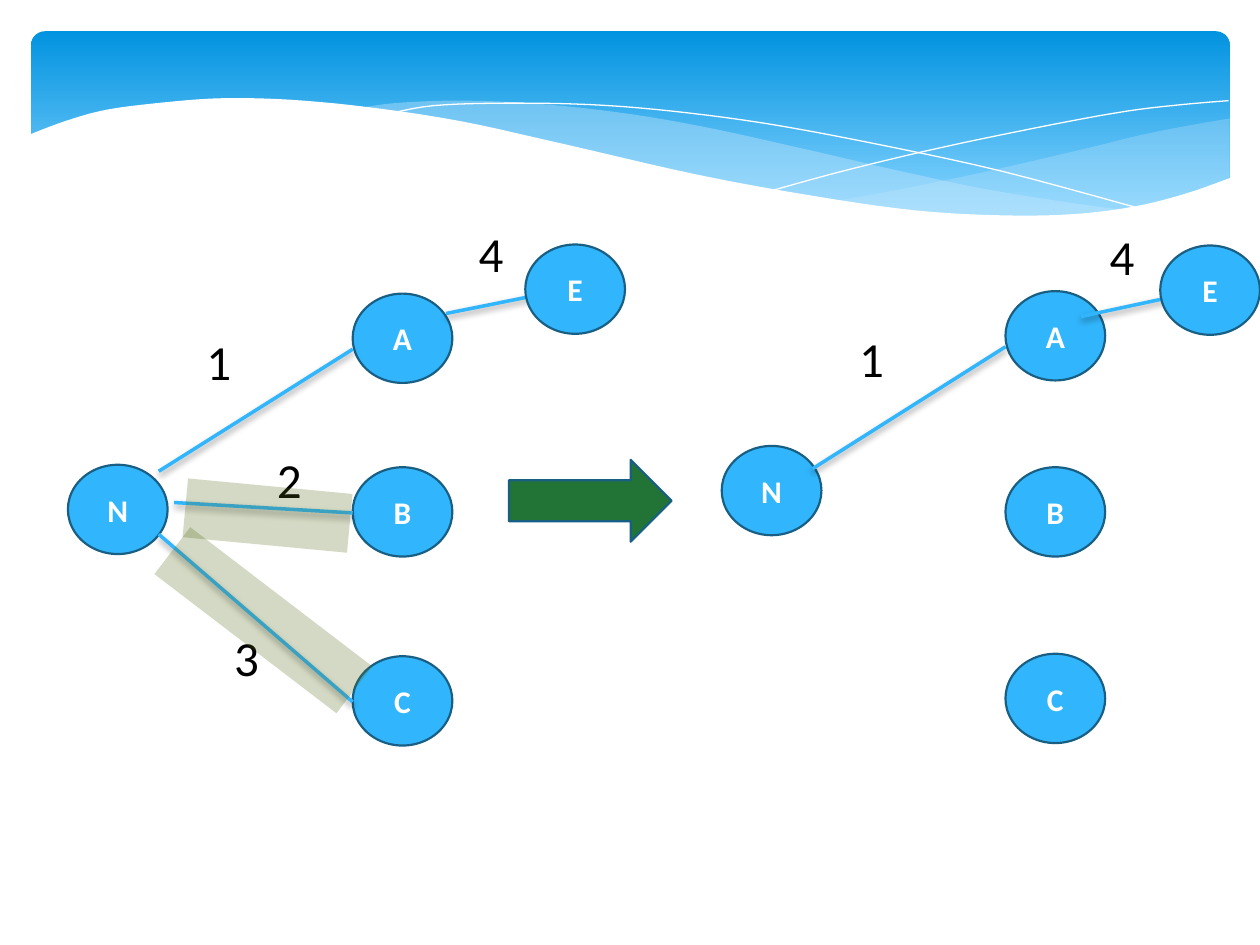
from dataclasses import dataclass

import lxml.etree
import pptx
import pptx.dml.color
import pptx.enum.shapes
import pptx.enum.text
import pptx.oxml
import pptx.oxml.ns
import pptx.util

Cm, Pt = pptx.util.Cm, pptx.util.Pt
SHAPE = pptx.enum.shapes.MSO_SHAPE
A_NS = "http://schemas.openxmlformats.org/drawingml/2006/main"
BLUE, OUTLINE, WHITE, PALE = "31B6FD", "195F84", "FFFFFF", "C6E7FC"
NODE_W, NODE_H, LABEL_H = 2.01, 1.8, 1.45

Points = list[tuple[float, float]]


@dataclass
class Node:
    name: str
    x: float
    y: float


@dataclass
class Edge:
    x1: float
    y1: float
    x2: float
    y2: float


@dataclass
class Label:
    text: str
    x: float
    y: float
    w: float


@dataclass
class Strip:
    x: float
    y: float
    w: float
    angle: float


def rgb(color: str) -> pptx.dml.color.RGBColor:
    return pptx.dml.color.RGBColor.from_string(color)


def paint(sp, fill: str | None = None, alpha: int = 100,
          line: str | None = None, width: float = 1.25) -> None:
    sp.shadow.inherit = False
    if fill:
        sp.fill.solid()
        sp.fill.fore_color.rgb = rgb(fill)
        if alpha < 100:
            clr = sp._element.spPr.find(f"{{{A_NS}}}solidFill")[0]
            lxml.etree.SubElement(clr, f"{{{A_NS}}}alpha", val=str(alpha * 1000))
    else:
        sp.fill.background()
    if line:
        sp.line.color.rgb = rgb(line)
        sp.line.width = Pt(width)
    else:
        sp.line.fill.background()


def write(sp, text: str, *, size: float, color: str, bold: bool = False,
          centered: bool = False) -> None:
    tf = sp.text_frame
    p = tf.paragraphs[0]
    if centered:
        tf.vertical_anchor = pptx.enum.text.MSO_ANCHOR.MIDDLE
        p.alignment = pptx.enum.text.PP_ALIGN.CENTER
    r = p.add_run()
    r.text = text
    r.font.name, r.font.size, r.font.bold = "Calibri", Pt(size), bold
    r.font.color.rgb = rgb(color)


def add_shape(s, kind, x: float, y: float, w: float, h: float):
    return s.shapes.add_shape(kind, Cm(x), Cm(y), Cm(w), Cm(h))


def smooth(knots: Points, steps: int = 5) -> Points:
    """Catmull-Rom curve through the knots."""
    ends = [knots[0], *knots, knots[-1]]
    curve = [knots[0]]
    for a, b, c, d in zip(ends, ends[1:], ends[2:], ends[3:]):
        for t in (i / steps for i in range(1, steps + 1)):
            curve.append(tuple(
                (2 * q + (r - p) * t + (2 * p - 5 * q + 4 * r - u) * t**2
                 + (3 * q - p - 3 * r + u) * t**3) / 2
                for p, q, r, u in zip(a, b, c, d)))
    return curve


def add_wave(s, points: Points, close: bool = True, **look) -> None:
    pts = [(Cm(x), Cm(y)) for x, y in points]
    fb = s.shapes.build_freeform(*pts[0], scale=1.0)
    fb.add_line_segments(pts[1:], close=close)
    paint(fb.convert_to_shape(), **look)


def add_node(s, node: Node) -> None:
    sp = add_shape(s, SHAPE.OVAL, node.x, node.y, NODE_W, NODE_H)
    paint(sp, BLUE, line=OUTLINE)
    write(sp, node.name, size=18, color=WHITE, bold=True, centered=True)


def add_edge(s, e: Edge) -> None:
    cx = s.shapes.add_connector(pptx.enum.shapes.MSO_CONNECTOR.STRAIGHT,
                                Cm(e.x1), Cm(e.y1), Cm(e.x2), Cm(e.y2))
    cx.line.color.rgb = rgb(BLUE)
    cx.line.width = Pt(2)
    cx._element.spPr.append(pptx.oxml.parse_xml(
        f'<a:effectLst xmlns:a="{A_NS}"><a:outerShdw blurRad="{Pt(4)}" dist="{Pt(2)}" '
        'dir="5400000" rotWithShape="0"><a:srgbClr val="000000"><a:alpha val="38000"/>'
        '</a:srgbClr></a:outerShdw></a:effectLst>'))


def add_label(s, label: Label) -> None:
    sp = s.shapes.add_textbox(Cm(label.x), Cm(label.y), Cm(label.w), Cm(LABEL_H))
    sp.text_frame.word_wrap = False
    sp.text_frame.auto_size = pptx.enum.text.MSO_AUTO_SIZE.SHAPE_TO_FIT_TEXT
    write(sp, label.text, size=28, color="000000")


def add_strip(s, strip: Strip) -> None:
    sp = add_shape(s, SHAPE.RECTANGLE, strip.x, strip.y, strip.w, 1.19)
    sp.rotation = strip.angle
    paint(sp, "526814", alpha=25)


RIGHT_WAVE = (
    smooth([(24.79, 2.39), (24.08, 2.51), (23.01, 2.72), (21.87, 3), (19.79, 3.48),
            (17.93, 3.86), (16.79, 4.06)])
    + smooth([(16.79, 4.06), (17.91, 4.19), (19.23, 4.32), (20.68, 4.37), (22.15, 4.29),
              (23.39, 4.06), (24.1, 3.86), (24.79, 3.58)]))
MIDDLE_WAVE = (
    smooth([(22.68, 4.24), (21.26, 4.04), (19.69, 3.78), (17.93, 3.4), (15.98, 2.95),
            (14.1, 2.54), (12.42, 2.26), (10.67, 2.08), (9.17, 2.03), (7.95, 2.08),
            (7.26, 2.18)])
    + smooth([(7.26, 2.18), (8.69, 2.39), (10.26, 2.69), (12.47, 3.2), (14.38, 3.63),
              (16.1, 3.96), (17.65, 4.19), (19, 4.32), (20.5, 4.39), (21.54, 4.37),
              (22.68, 4.24)]))
FALLING_LINE = smooth([(7.85, 2.29), (8.74, 2.13), (10.19, 2.08), (11.91, 2.11),
                       (13.54, 2.24), (15.44, 2.49), (17.65, 2.9), (20.19, 3.45),
                       (23.04, 4.22)])
RISING_LINE = smooth([(15.57, 3.84), (17.07, 3.43), (19, 2.97), (21.23, 2.51),
                      (22.73, 2.24), (23.83, 2.11), (24.77, 2.03)])
WHITE_WAVE = smooth([(24.82, 3.58), (23.88, 3.91), (22.83, 4.17), (21.59, 4.32),
                     (20.14, 4.34), (18.44, 4.24), (16.46, 3.96), (14.1, 3.53),
                     (11.35, 2.9), (9.27, 2.44), (7.42, 2.16), (5.84, 2.01), (4.5, 1.98),
                     (3.35, 2.06), (2.16, 2.21), (1.32, 2.44), (0.58, 2.72)]
                    ) + [(0.58, 5.69), (24.82, 5.69)]

NODES = [Node("C", 7.11, 13.23), Node("A", 7.11, 5.92), Node("N", 1.37, 9.37),
         Node("B", 7.11, 9.42), Node("C", 20.27, 13.18), Node("A", 20.27, 5.87),
         Node("N", 14.55, 8.99), Node("B", 20.27, 9.42)]
END_NODES = [Node("E", 10.59, 4.93), Node("E", 23.39, 4.95)]
EDGES = [Edge(3.2, 9.5, 7.11, 7.04), Edge(3.51, 10.13, 7.11, 10.34),
         Edge(3.2, 10.77, 7.11, 14.15), Edge(8.99, 6.32, 11.73, 5.77),
         Edge(16.38, 9.45, 20.27, 6.99), Edge(21.79, 6.38, 24.54, 5.79)]
LABELS = [Label("1", 3.91, 6.55, 0.86), Label("2", 5.33, 8.94, 0.97),
          Label("3", 4.47, 12.52, 0.99), Label("4", 9.4, 4.39, 1.04),
          Label("1", 17.07, 6.5, 0.86), Label("4", 22.12, 4.45, 1.04)]
STRIPS = [Strip(3.73, 9.8, 3.33, 5.4), Strip(3, 11.91, 4.62, 37.4)]


def main() -> None:
    prs = pptx.Presentation()
    prs.slide_width, prs.slide_height = Cm(25.4), Cm(19.05)
    s = prs.slides.add_slide(prs.slide_layouts[6])

    # Header band with waves
    band = add_shape(s, SHAPE.ROUNDED_RECTANGLE, 0.63, 0.63, 24.16, 3.96)
    band.adjustments[0] = 0.07
    paint(band)
    band.fill.gradient()
    band.fill.gradient_angle = 270
    for stop, color, pos in zip(band.fill.gradient_stops, ("0293E0", "83D3FE"), (0, 0.9)):
        stop.color.rgb, stop.position = rgb(color), pos
    add_wave(s, RIGHT_WAVE, fill=PALE, alpha=29)
    add_wave(s, MIDDLE_WAVE, fill=PALE, alpha=40)
    for line in (FALLING_LINE, RISING_LINE):
        add_wave(s, line, close=False, line=WHITE, width=0)
    add_wave(s, WHITE_WAVE, fill=WHITE)

    # Graphs before and after, with the removed edges struck out
    for draw, items in ((add_node, NODES), (add_edge, EDGES), (add_label, LABELS),
                        (add_strip, STRIPS), (add_node, END_NODES)):
        for item in items:
            draw(s, item)

    # Arrow between the graphs
    arrow = add_shape(s, SHAPE.RIGHT_ARROW, 10.26, 9.27, 3.28, 1.65)
    paint(arrow, "217436", line=OUTLINE)

    prs.save("out.pptx")


if __name__ == "__main__":
    main()
